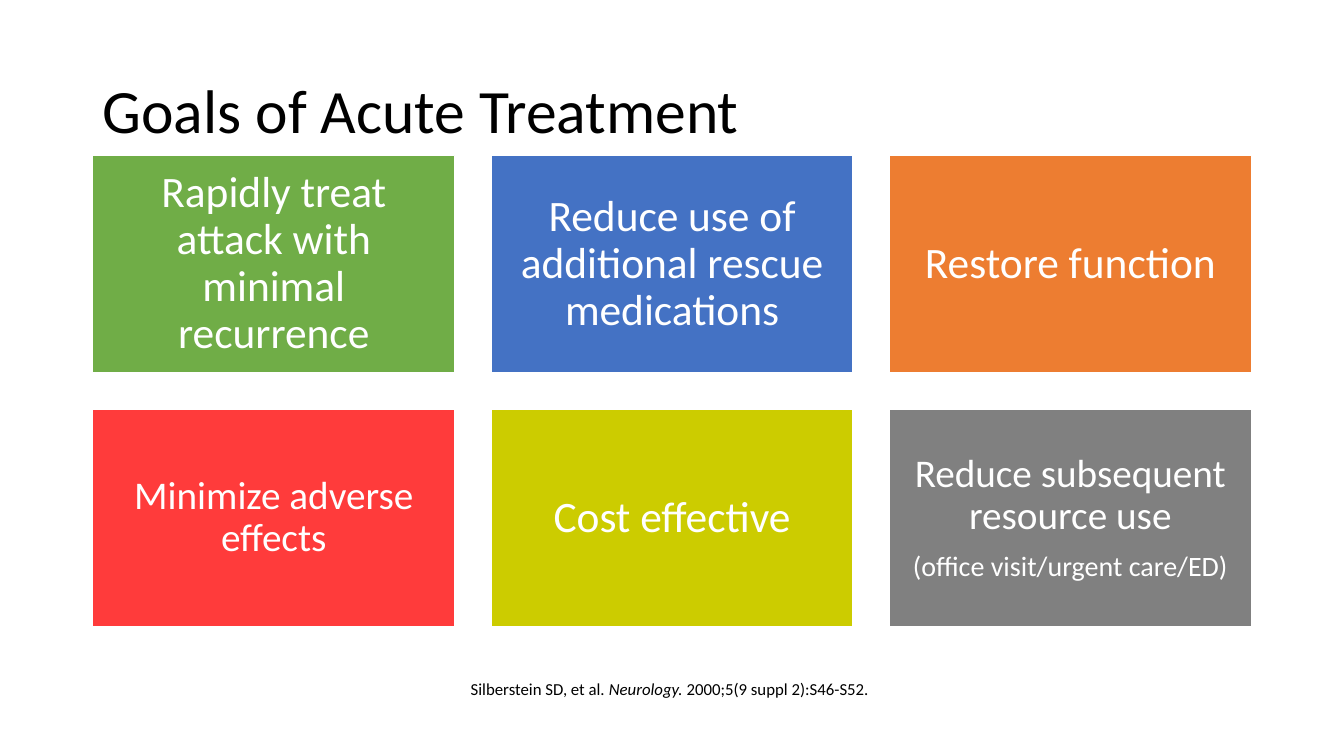
from pptx import Presentation
from pptx.dml.color import RGBColor
from pptx.enum.shapes import MSO_SHAPE
from pptx.enum.text import MSO_ANCHOR, MSO_AUTO_SIZE, PP_ALIGN
from pptx.util import Inches, Pt

RECT = MSO_SHAPE.RECTANGLE
MIDDLE = MSO_ANCHOR.MIDDLE
CENTER = PP_ALIGN.CENTER
LEFT = PP_ALIGN.LEFT
GROW = MSO_AUTO_SIZE.SHAPE_TO_FIT_TEXT

BLACK = RGBColor(0x00, 0x00, 0x00)
WHITE = RGBColor(0xFF, 0xFF, 0xFF)
GREEN = RGBColor(0x70, 0xAD, 0x47)
BLUE = RGBColor(0x44, 0x72, 0xC4)
ORANGE = RGBColor(0xED, 0x7D, 0x31)
RED = RGBColor(0xFF, 0x3B, 0x3B)
OLIVE = RGBColor(0xCC, 0xCC, 0x00)
GRAY = RGBColor(0x80, 0x80, 0x80)

COLS = 3
MARGIN, TOP = 0.92, 1.54
CARD_W, CARD_H = 3.59, 2.16
GAP = 0.36


def add_text(p, text, size, color=WHITE, italic=False, align=CENTER, spacing=0.9, after=0):
    p.alignment = align
    p.line_spacing = spacing
    p.space_after = Pt(after)
    r = p.add_run()
    r.text = text
    r.font.name = "Calibri"
    r.font.size = Pt(size)
    r.font.italic = italic
    r.font.color.rgb = color


prs = Presentation()
prs.slide_width = Inches(13.33)
prs.slide_height = Inches(7.5)
s = prs.slides.add_slide(prs.slide_layouts[6])

title = s.shapes.add_textbox(Inches(MARGIN), Inches(0.4), Inches(11.5), Inches(1.45))
tf = title.text_frame
tf.word_wrap = True
tf.vertical_anchor = MIDDLE
add_text(tf.paragraphs[0], "Goals of Acute Treatment", 44, BLACK, align=LEFT)

goals = [
    (GREEN, [("Rapidly treat attack with minimal recurrence", 31)]),
    (BLUE, [("Reduce use of additional rescue medications", 31)]),
    (ORANGE, [("Restore function", 31)]),
    (RED, [("Minimize adverse effects", 28)]),
    (OLIVE, [("Cost effective", 31)]),
    (GRAY, [("Reduce subsequent resource use", 28), ("(office visit/urgent care/ED)", 20)]),
]
for i, (color, lines) in enumerate(goals):
    row, col = divmod(i, COLS)
    sp = s.shapes.add_shape(
        RECT,
        Inches(MARGIN + col * (CARD_W + GAP)),
        Inches(TOP + row * (CARD_H + GAP)),
        Inches(CARD_W),
        Inches(CARD_H),
    )
    sp.shadow.inherit = False
    sp.fill.solid()
    sp.fill.fore_color.rgb = color
    sp.line.color.rgb = WHITE
    sp.line.width = Pt(1)
    tf = sp.text_frame
    tf.word_wrap = True
    tf.vertical_anchor = MIDDLE
    inset = Inches(0.13 if lines[0][1] == 31 else 0.12)
    tf.margin_left = tf.margin_right = tf.margin_top = tf.margin_bottom = inset
    for n, (text, size) in enumerate(lines):
        p = tf.add_paragraph() if n else tf.paragraphs[0]
        add_text(p, text, size, after=0.35 * size)

citation = s.shapes.add_textbox(Inches(4.57), Inches(6.68), Inches(4.19), Inches(0.3))
tf = citation.text_frame
tf.word_wrap = False
tf.auto_size = GROW
for text, italic in [
    ("Silberstein SD, et al. ", False),
    ("Neurology.", True),
    (" 2000;5(9 suppl 2):S46-S52.", False),
]:
    add_text(tf.paragraphs[0], text, 12, BLACK, italic, LEFT, 1.0, 6)

prs.save("out.pptx")
